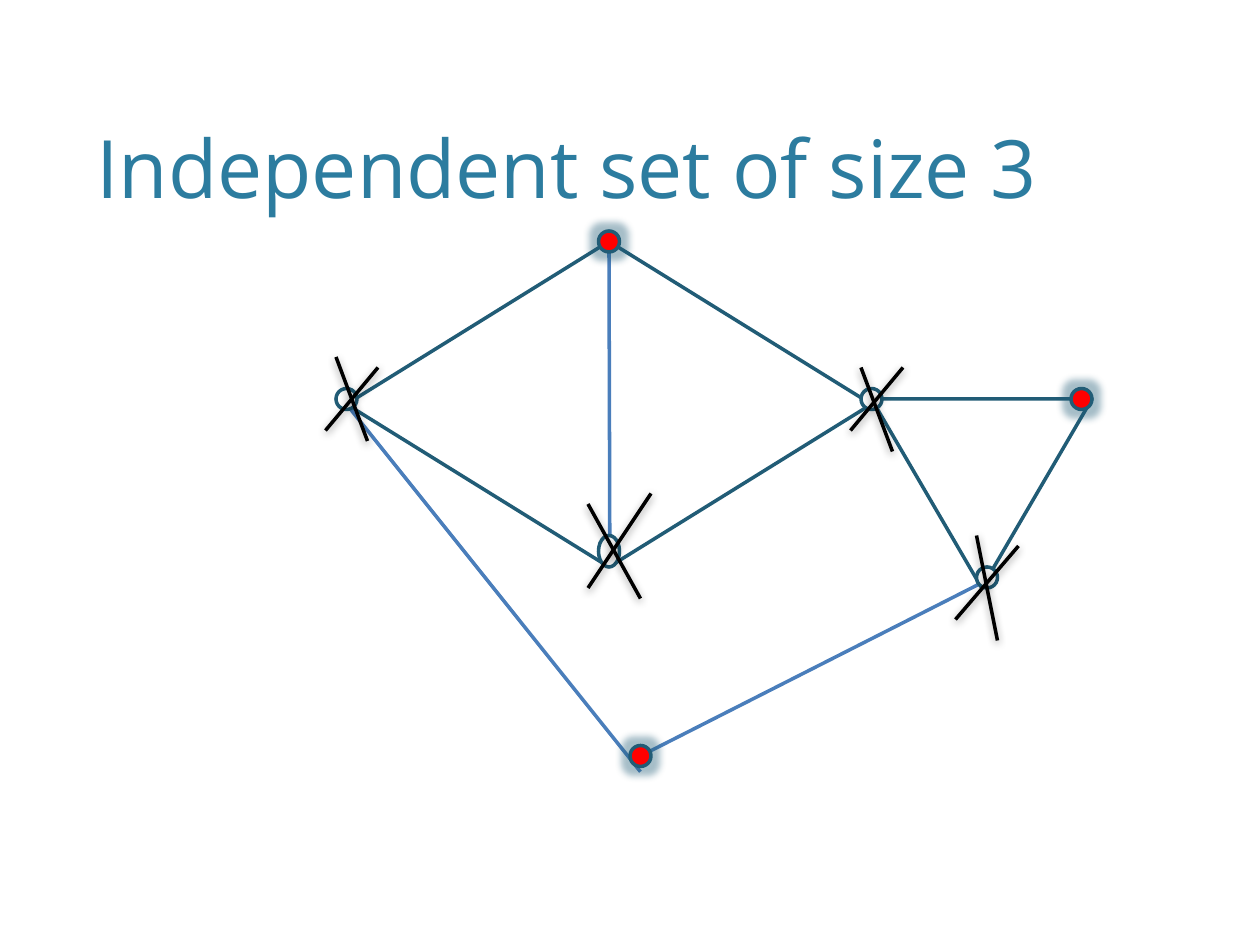
"""Builds a slide showing an independent set of size 3 in a small graph."""
from lxml import etree
from pptx import Presentation
from pptx.dml.color import RGBColor
from pptx.enum import shapes, text
from pptx.oxml import parse_xml
from pptx.util import Pt

A = "http://schemas.openxmlformats.org/drawingml/2006/main"
TEAL, BLUE, RED, WHITE, BLACK = "215C76", "4A7EBB", "FF0000", "FFFFFF", "000000"
SHADOW = (f'<a:effectLst xmlns:a="{A}"><a:outerShdw blurRad="63500" dist="20320" dir="5400000" '
          'rotWithShape="0"><a:srgbClr val="000000"><a:alpha val="38000"/></a:srgbClr>'
          '</a:outerShdw></a:effectLst>')
GLOW = (f'<a:glow xmlns:a="{A}" rad="101600"><a:srgbClr val="{TEAL}">'
        '<a:alpha val="40000"/></a:srgbClr></a:glow>')


def add_outline(kind, left, top, width, height, fill):
    outline = slide.shapes.add_shape(kind, Pt(left), Pt(top), Pt(width), Pt(height))
    outline.shadow.inherit = False
    outline.fill.solid()
    outline.fill.fore_color.rgb = RGBColor.from_string(fill)
    outline.line.color.rgb = RGBColor.from_string(TEAL)
    outline.line.width = Pt(2)
    return outline


def add_stroke(x1, y1, x2, y2, color, effects=f'<a:effectLst xmlns:a="{A}"/>'):
    stroke = slide.shapes.add_connector(
        shapes.MSO_CONNECTOR.STRAIGHT, Pt(x1), Pt(y1), Pt(x2), Pt(y2))
    stroke.line.color.rgb = RGBColor.from_string(color)
    stroke.line.width = Pt(2)
    stroke._element.spPr.append(parse_xml(effects))


prs = Presentation()
prs.slide_width, prs.slide_height = Pt(720), Pt(540)
slide = prs.slides.add_slide(prs.slide_layouts[5])

title = slide.shapes.title
title.left, title.top, title.width, title.height = Pt(0), Pt(7), Pt(648), Pt(119)
title.text_frame.text = "Independent set of size 3"
title.text_frame.vertical_anchor = text.MSO_ANCHOR.BOTTOM
heading = title.text_frame.paragraphs[0]
heading.alignment = text.PP_ALIGN.CENTER
heading.runs[0].font.name = "Open Sans"
heading.runs[0].font.size = Pt(46)
heading.runs[0].font.color.rgb = RGBColor.from_string("2C7C9F")

add_outline(shapes.MSO_SHAPE.DIAMOND, 198, 138, 300, 186, WHITE)
add_stroke(348, 138, 348.5, 324, BLUE)
add_outline(shapes.MSO_SHAPE.FLOWCHART_MERGE, 498, 228, 126, 108, WHITE)
add_stroke(198, 231, 366, 441, BLUE)
add_stroke(567, 330, 366, 432, BLUE)

chosen = [(366, 432), (348, 138), (618, 228)]
for x, y in chosen:
    vertex = add_outline(shapes.MSO_SHAPE.OVAL, x - 6, y - 6, 12, 12, RED)
    vertex._element.spPr.find(f"{{{A}}}effectLst").append(etree.fromstring(GLOW))

excluded = [(498, 228, 12), (564, 330, 12), (348, 315, 18), (198, 228, 12)]
for x, y, height in excluded:
    add_outline(shapes.MSO_SHAPE.OVAL, x - 6, y - height / 2, 12, height, WHITE)

cross_strokes = [
    (336, 288, 366, 342), (372, 282, 336, 336),
    (492, 210, 510, 258), (516, 210, 486, 246),
    (192, 204, 210, 252), (216, 210, 186, 246),
    (558, 306, 570, 366), (582, 312, 546, 354),
]
for ends in cross_strokes:
    add_stroke(*ends, BLACK, SHADOW)

prs.save("out.pptx")
